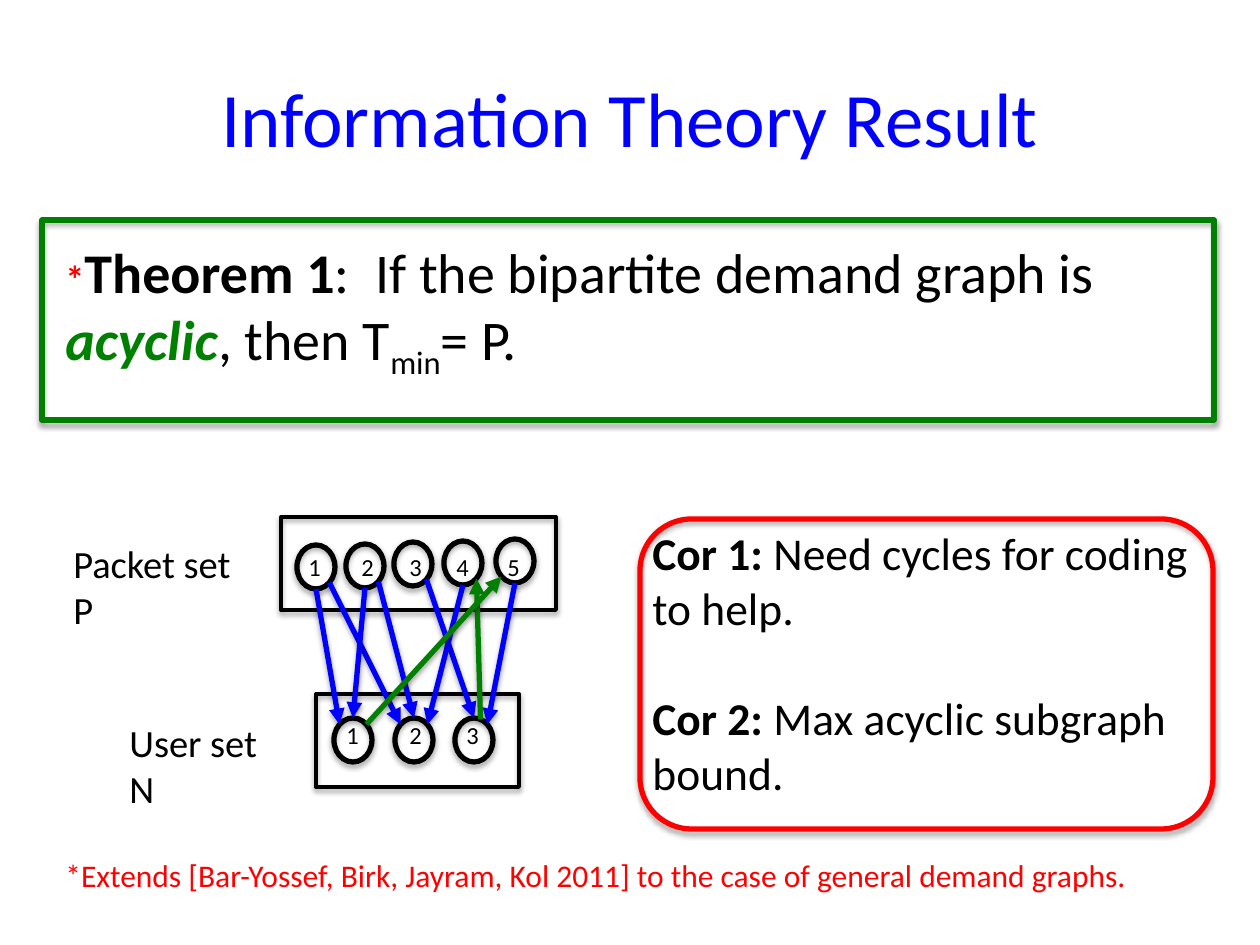
from dataclasses import dataclass
from math import cos, radians, sin

from lxml.etree import SubElement
from pptx import Presentation
from pptx.dml.color import RGBColor
from pptx.enum.shapes import MSO_CONNECTOR as Connector, MSO_SHAPE as Shape
from pptx.enum.text import MSO_ANCHOR as Anchor, PP_ALIGN as Align
from pptx.oxml.ns import qn
from pptx.util import Pt

SCALE = 914400 // 126  # EMU in one px


@dataclass(frozen=True)
class Theme:
    font: str = "Calibri"
    black: str = "000000"
    blue: str = "0000FF"
    green: str = "008000"
    red: str = "FF0000"
    title: int = 44
    theorem: int = 32
    corollary: int = 26
    set_name: int = 22
    note: int = 18
    node: int = 14
    heavy: float = 3
    medium: float = 2.25


THEME = Theme()
NODE_W, NODE_H = 38, 44

# Nodes: number -> (centre x, centre y, label left)
PACKETS = {1: (316, 567, 296), 2: (365, 566, 349), 3: (413, 564, 397),
           4: (463, 563, 444), 5: (515, 561, 495)}
USERS = {1: (353, 740, 334), 2: (414, 740, 397), 3: (474, 740, 454)}

# Where an edge meets a node, in degrees counter-clockwise from the right
TOP, BOTTOM = 90, 270
TOP_LEFT, TOP_RIGHT, BOTTOM_LEFT, BOTTOM_RIGHT = 135, 45, 225, 315
NEAR_TOP = 70

# Edges: (packet, angle, user, angle)
DEMANDS = [(3, BOTTOM_RIGHT, 3, TOP), (2, BOTTOM_RIGHT, 2, TOP),
           (1, BOTTOM, 1, TOP_LEFT), (1, BOTTOM_RIGHT, 2, TOP_LEFT),
           (2, BOTTOM, 1, TOP), (4, BOTTOM, 2, TOP_RIGHT),
           (5, BOTTOM, 3, TOP_RIGHT)]
RETURNS = [(4, BOTTOM_RIGHT, 3, NEAR_TOP), (5, BOTTOM_LEFT, 1, TOP_RIGHT)]


def px(*lengths):
    return [round(length * SCALE) for length in lengths]


def add_shadow(element, distance, opacity):
    effects = element.spPr.find(qn("a:effectLst"))
    if effects is None:
        effects = SubElement(element.spPr, qn("a:effectLst"))
    shadow = SubElement(effects, qn("a:outerShdw"), blurRad="40000",
                        dist=str(distance), dir="5400000", rotWithShape="0")
    tint = SubElement(shadow, qn("a:srgbClr"), val=THEME.black)
    SubElement(tint, qn("a:alpha"), val=str(opacity * 1000))


def add_outline(slide, kind, box, color, weight=THEME.heavy):
    outline = slide.shapes.add_shape(kind, *px(*box))
    outline.fill.background()
    outline.line.color.rgb = RGBColor.from_string(color)
    outline.line.width = Pt(weight)
    outline.shadow.inherit = False
    add_shadow(outline._element, 23000, 35)


def add_arrow(slide, start, end, color):
    arrow = slide.shapes.add_connector(Connector.STRAIGHT, *px(*start, *end))
    arrow.line.color.rgb = RGBColor.from_string(color)
    arrow.line.width = Pt(THEME.heavy)
    SubElement(arrow.line._get_or_add_ln(), qn("a:tailEnd"), type="triangle")
    add_shadow(arrow._element, 20000, 38)


def add_text(slide, box, paragraphs, size, color=THEME.black,
             align=Align.LEFT, anchor=Anchor.TOP, gap=0):
    """Each paragraph is a list of (text, format) runs."""
    frame = slide.shapes.add_textbox(*px(*box)).text_frame
    frame.word_wrap = True
    frame.vertical_anchor = anchor
    for index, runs in enumerate(paragraphs):
        paragraph = frame.add_paragraph() if index else frame.paragraphs[0]
        paragraph.alignment = align
        if index:
            paragraph.space_before = Pt(gap)
        for text, style in runs:
            run = paragraph.add_run()
            run.text = text
            font = run.font
            font.name = THEME.font
            font.size = Pt(style.get("size", size))
            font.bold = style.get("bold", False)
            font.italic = style.get("italic", False)
            font.color.rgb = RGBColor.from_string(style.get("color", color))
            if "baseline" in style:
                font._element.set("baseline", str(style["baseline"] * 1000))


def add_plain(slide, box, text, size, **options):
    add_text(slide, box, [[(text, {})]], size, **options)


def add_nodes(slide, nodes):
    for x, y, _ in nodes.values():
        box = (x - NODE_W / 2, y - NODE_H / 2, NODE_W, NODE_H)
        add_outline(slide, Shape.OVAL, box, THEME.black)


def add_numbers(slide, nodes, top):
    for number, (_, _, left) in nodes.items():
        add_plain(slide, (left, top, 38, 43), str(number), THEME.node)


def rim(node, angle):
    x, y, _ = node
    turn = radians(angle)
    return x + NODE_W / 2 * cos(turn), y - NODE_H / 2 * sin(turn)


def add_demand_graph(slide):
    add_plain(slide, (117, 713, 185, 43), "User set N", THEME.set_name)
    add_plain(slide, (61, 534, 205, 43), "Packet set P", THEME.set_name)
    add_nodes(slide, USERS)
    add_nodes(slide, PACKETS)
    for box in ((316, 694, 203, 93), (281, 517, 275, 93)):
        add_outline(slide, Shape.RECTANGLE, box, THEME.black, THEME.medium)
    for packet, leave, user, reach in DEMANDS:
        add_arrow(slide, rim(PACKETS[packet], leave),
                  rim(USERS[user], reach), THEME.blue)
    for packet, reach, user, leave in RETURNS:
        add_arrow(slide, rim(USERS[user], leave),
                  rim(PACKETS[packet], reach), THEME.green)
    add_numbers(slide, PACKETS, 546)
    add_numbers(slide, USERS, 714)


def main():
    deck = Presentation()
    deck.slide_width, deck.slide_height = px(1260, 945)
    slide = deck.slides.add_slide(deck.slide_layouts[6])
    bold = {"bold": True}

    # Title and theorem
    add_outline(slide, Shape.RECTANGLE, (42, 220, 1172, 200), THEME.green)
    add_plain(slide, (63, 38, 1134, 157), "Information Theory Result",
              THEME.title, color=THEME.blue, align=Align.CENTER,
              anchor=Anchor.MIDDLE)
    add_text(slide, (53, 231, 1197, 179), [[
        ("*", {"size": 22, "color": THEME.red, "bold": True}),
        ("Theorem 1", bold),
        (":  If the bipartite demand graph is ", {}),
        ("acyclic", {"color": THEME.green, "bold": True, "italic": True}),
        (", then T", {}),
        ("min", {"baseline": -25}),
        ("= P.", {}),
    ]], THEME.theorem)

    # Packets, users and the demands between them
    add_demand_graph(slide)

    # Corollaries
    corollaries = (640, 519, 573, 310)
    add_text(slide, corollaries, [
        [("Cor 1:", bold), (" Need cycles for coding to help.", {})],
        [("Cor 2:", bold), (" Max acyclic subgraph bound.", {})],
    ], THEME.corollary, gap=32)
    add_outline(slide, Shape.ROUNDED_RECTANGLE, corollaries, THEME.red)

    # Source note
    add_plain(slide, (53, 850, 1162, 50),
              "*Extends [Bar-Yossef, Birk, Jayram, Kol 2011] to the case of "
              "general demand graphs.", THEME.note, color=THEME.red)

    deck.save("out.pptx")


if __name__ == "__main__":
    main()
